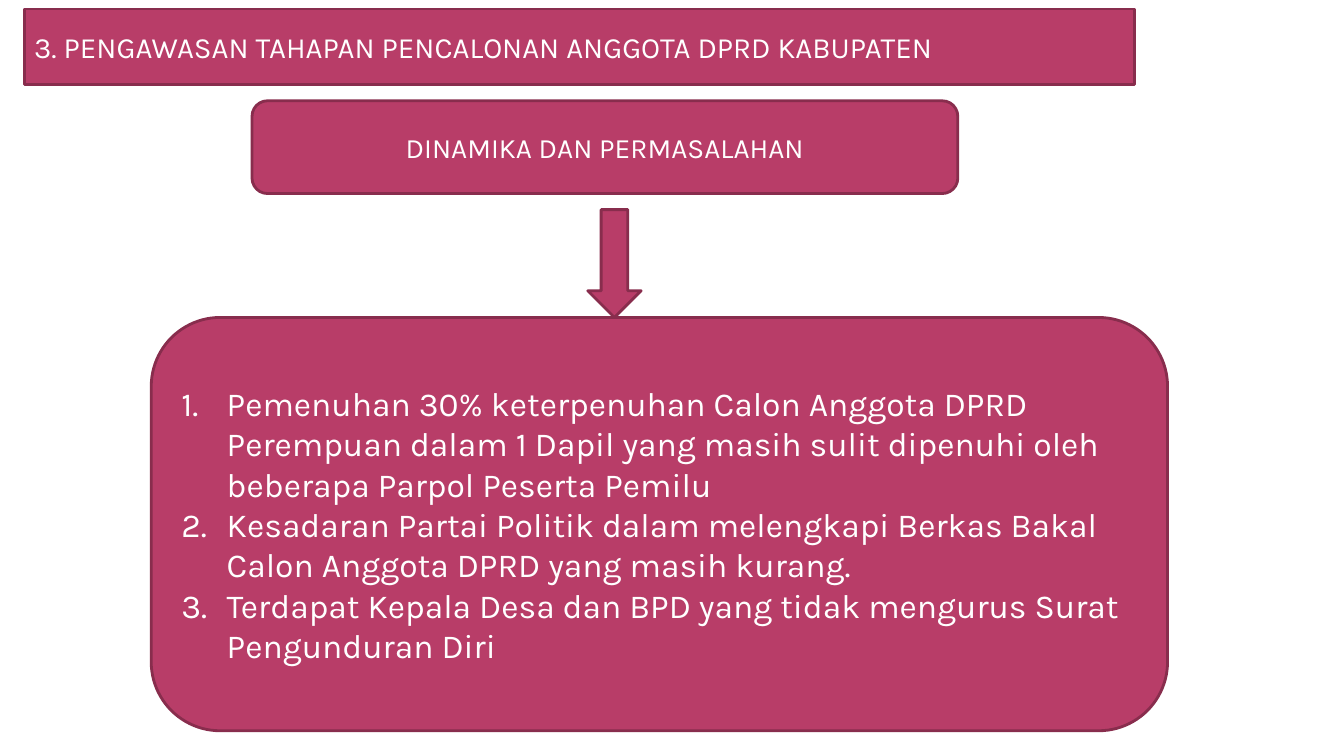
"""Build the slide on problems in supervising DPRD candidate nominations."""
import pptx
import pptx.util
import pptx.dml.color
import pptx.enum.shapes
import pptx.enum.text
import pptx.oxml.ns
import lxml.etree

Inches = pptx.util.Inches
Pt = pptx.util.Pt
MSO_SHAPE = pptx.enum.shapes.MSO_SHAPE
PP_ALIGN = pptx.enum.text.PP_ALIGN


def color(value):
    return pptx.dml.color.RGBColor.from_string(value)


def add_block(geometry, left, top, width, height, lines=(), size=20,
              align=PP_ALIGN.LEFT, numbered=False):
    block = slide.shapes.add_shape(
        geometry, Inches(left), Inches(top), Inches(width), Inches(height))
    block.shadow.inherit = False
    block.fill.solid()
    block.fill.fore_color.rgb = color("B83D68")
    block.line.color.rgb = color("882D4D")
    block.line.width = Pt(2)
    frame = block.text_frame
    frame.word_wrap = True
    frame.vertical_anchor = pptx.enum.text.MSO_ANCHOR.MIDDLE
    for index, line in enumerate(lines):
        paragraph = frame.add_paragraph() if index else frame.paragraphs[0]
        paragraph.alignment = align
        if numbered:
            properties = paragraph._p.get_or_add_pPr()
            properties.set("marL", str(Inches(0.45)))
            properties.set("indent", str(Inches(-0.45)))
            number = lxml.etree.SubElement(
                properties, pptx.oxml.ns.qn("a:buAutoNum"))
            number.set("type", "arabicPeriod")
        run = paragraph.add_run()
        run.text = line
        run.font.name = "Karla"
        run.font.size = Pt(size)
        run.font.color.rgb = color("FFFFFF")


presentation = pptx.Presentation()
presentation.slide_width = Inches(13.33)
presentation.slide_height = Inches(7.5)
slide = presentation.slides.add_slide(presentation.slide_layouts[6])

problems = [
    "Pemenuhan 30% keterpenuhan Calon Anggota DPRD Perempuan dalam 1 Dapil "
    "yang masih sulit dipenuhi oleh beberapa Parpol Peserta Pemilu",
    "Kesadaran Partai Politik dalam melengkapi Berkas Bakal Calon Anggota "
    "DPRD yang masih kurang.",
    "Terdapat Kepala Desa dan BPD yang tidak mengurus Surat Pengunduran Diri",
]

add_block(MSO_SHAPE.RECTANGLE, 0.24, 0.09, 11.01, 0.75,
          ["3. PENGAWASAN TAHAPAN PENCALONAN ANGGOTA DPRD KABUPATEN"], size=21)
add_block(MSO_SHAPE.ROUNDED_RECTANGLE, 2.5, 1, 7, 0.92,
          ["DINAMIKA DAN PERMASALAHAN"], align=PP_ALIGN.CENTER)
add_block(MSO_SHAPE.DOWN_ARROW, 5.83, 2.08, 0.53, 1.07)
add_block(MSO_SHAPE.ROUNDED_RECTANGLE, 1.5, 3.15, 10.08, 4.1,
          problems, size=24, numbered=True)

presentation.save("out.pptx")
